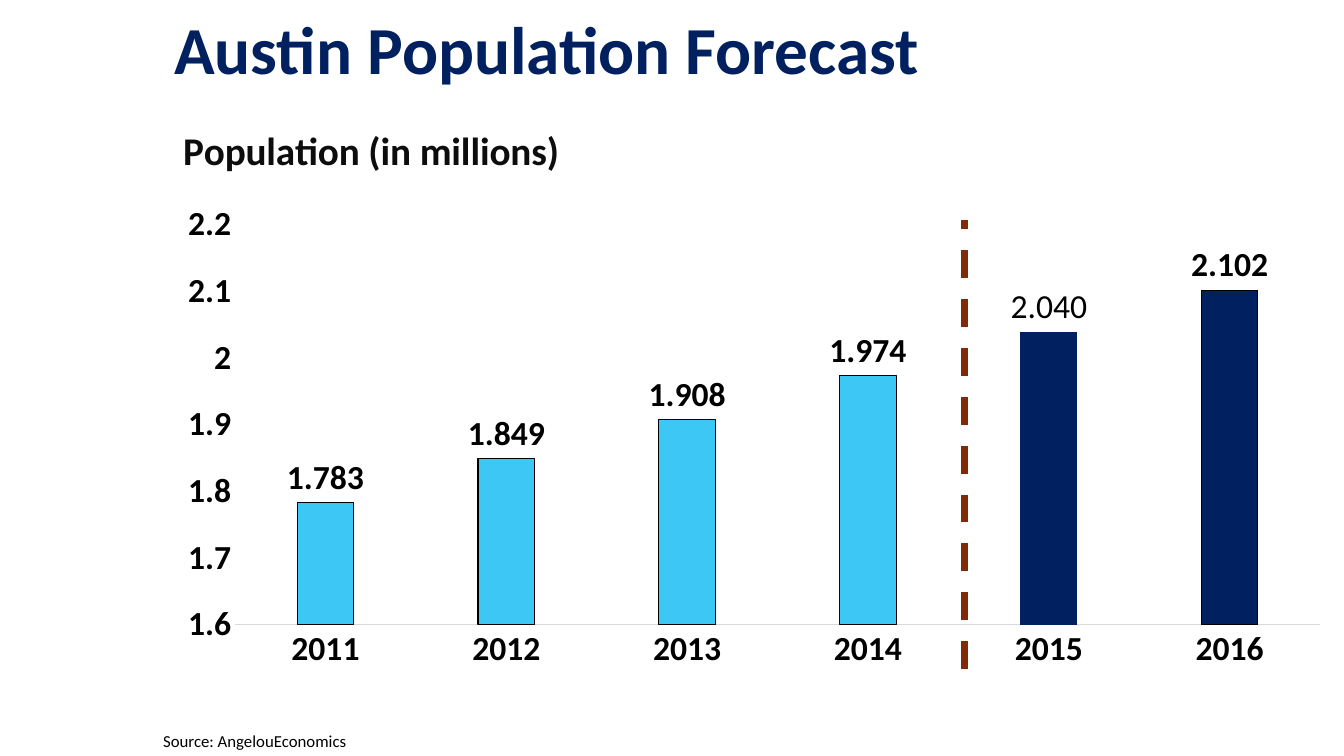
from lxml import etree
from pptx import Presentation
from pptx.chart.data import CategoryChartData
from pptx.dml.color import RGBColor
from pptx.enum.chart import XL_CHART_TYPE as ChartType, XL_LABEL_POSITION as LabelPos, XL_TICK_MARK as Tick
from pptx.enum.dml import MSO_LINE
from pptx.enum.shapes import MSO_CONNECTOR as Connector
from pptx.enum.text import MSO_ANCHOR as Anchor
from pptx.oxml import parse_xml
from pptx.oxml.ns import qn
from pptx.util import Pt

COLORS = {
    "navy": "002060", "sky": "3DC7F4", "rust": "812A08",
    "black": "000000", "ink": "0D0D0D", "axis": "D9D9D9",
}
CHART_NS = "http://schemas.openxmlformats.org/drawingml/2006/chart"


def style(font, size, color, bold=False):
    font.name, font.size, font.bold = "Calibri", Pt(size), bold
    font.color.rgb = RGBColor.from_string(COLORS[color])


def manual_layout(target="", **fractions):
    """Layout element placing a chart part by fractions of the chart area."""
    inner = f'<c:layoutTarget val="{target}"/>' if target else ""
    inner += '<c:xMode val="edge"/><c:yMode val="edge"/>'
    inner += "".join(f'<c:{key} val="{val}"/>' for key, val in fractions.items())
    return parse_xml(f'<c:layout xmlns:c="{CHART_NS}"><c:manualLayout>{inner}'
                     "</c:manualLayout></c:layout>")


prs = Presentation()
prs.slide_width, prs.slide_height = Pt(960), Pt(540)
slide = prs.slides.add_slide(prs.slide_layouts[6])

# Heading and source line
texts = [
    ("Austin Population Forecast", (117.4, 0, 842.4, 75.6), 48, "navy", True, Anchor.MIDDLE, 0.9),
    ("Source: AngelouEconomics", (109.4, 518.4, 342, 21.6), 12, "black", False, Anchor.TOP, 1.0),
]
for wording, place, size, color, bold, anchor, spacing in texts:
    frame = slide.shapes.add_textbox(*map(Pt, place)).text_frame
    frame.word_wrap = True
    frame.vertical_anchor = anchor
    frame.text = wording
    frame.paragraphs[0].line_spacing = spacing
    style(frame.paragraphs[0].runs[0].font, size, color, bold)

# Population chart
population = CategoryChartData(number_format="0.000")
population.categories = ["2011", "2012", "2013", "2014", "2015", "2016"]
population.add_series("Series 1", (1.783, 1.849, 1.908, 1.974, 2.04, 2.102))
chart = slide.shapes.add_chart(ChartType.COLUMN_CLUSTERED, Pt(117.4), Pt(75.6),
                               Pt(842.4), Pt(411.1), population).chart
style(chart.font, 10, "black")
chart.has_legend = False

# Chart title and plot placement
chart.has_title = True
title = chart.chart_title
title.text_frame.text = "Population (in millions)"
style(title.text_frame.paragraphs[0].runs[0].font, 28, "ink", True)
title.include_in_layout = False
title_xml = chart.element.find(".//" + qn("c:title"))
plot_xml = chart.element.find(".//" + qn("c:plotArea"))
for part in (title_xml, plot_xml):
    for old_layout in part.findall(qn("c:layout")):
        part.remove(old_layout)
title_xml.find(qn("c:overlay")).addprevious(manual_layout(x=0.01, y=0.02))
plot_xml.insert(0, manual_layout("inner", x=0.06, y=0.207, w=0.92, h=0.695))

# Axes
years, millions = chart.category_axis, chart.value_axis
for axis in (years, millions):
    axis.major_tick_mark = axis.minor_tick_mark = Tick.NONE
    axis.has_major_gridlines = False
    style(axis.tick_labels.font, 24, "black", True)
years.format.line.color.rgb = RGBColor.from_string(COLORS["axis"])
years.format.line.width = Pt(0.75)
millions.format.line.fill.background()
millions.minimum_scale, millions.maximum_scale, millions.major_unit = 1.6, 2.2, 0.1
millions.tick_labels.number_format = "General"
millions.tick_labels.number_format_is_linked = False

# Columns: history in sky blue, forecast in navy
plot = chart.plots[0]
plot.gap_width, plot.overlap, plot.vary_by_categories = 219, -27, False
series = plot.series[0]
forecast = [series.points[i] for i in (4, 5)]
for columns, color in [(series, "sky"), (forecast[0], "navy"), (forecast[1], "navy")]:
    columns.format.fill.solid()
    columns.format.fill.fore_color.rgb = RGBColor.from_string(COLORS[color])
    columns.format.line.color.rgb = RGBColor.from_string(COLORS["black"])
    columns.format.line.width = Pt(0.75)
forecast[0].format.line.fill.background()

# Value labels
labels = series.data_labels
labels.show_value = True
labels.number_format, labels.number_format_is_linked = "0.000", False
labels.position = LabelPos.OUTSIDE_END
style(labels.font, 24, "black", True)
first_forecast = forecast[0].data_label
first_forecast.text_frame.text = "2.040"
style(first_forecast.text_frame.paragraphs[0].runs[0].font, 24, "black")
first_forecast.position = LabelPos.OUTSIDE_END

# Divider between history and forecast
divider = slide.shapes.add_connector(Connector.STRAIGHT, Pt(689), Pt(478), Pt(689), Pt(157))
divider.line.color.rgb = RGBColor.from_string(COLORS["rust"])
divider.line.width = Pt(5)
divider.line.dash_style = MSO_LINE.DASH
etree.SubElement(divider.element.spPr, qn("a:effectLst"))

prs.save("out.pptx")
